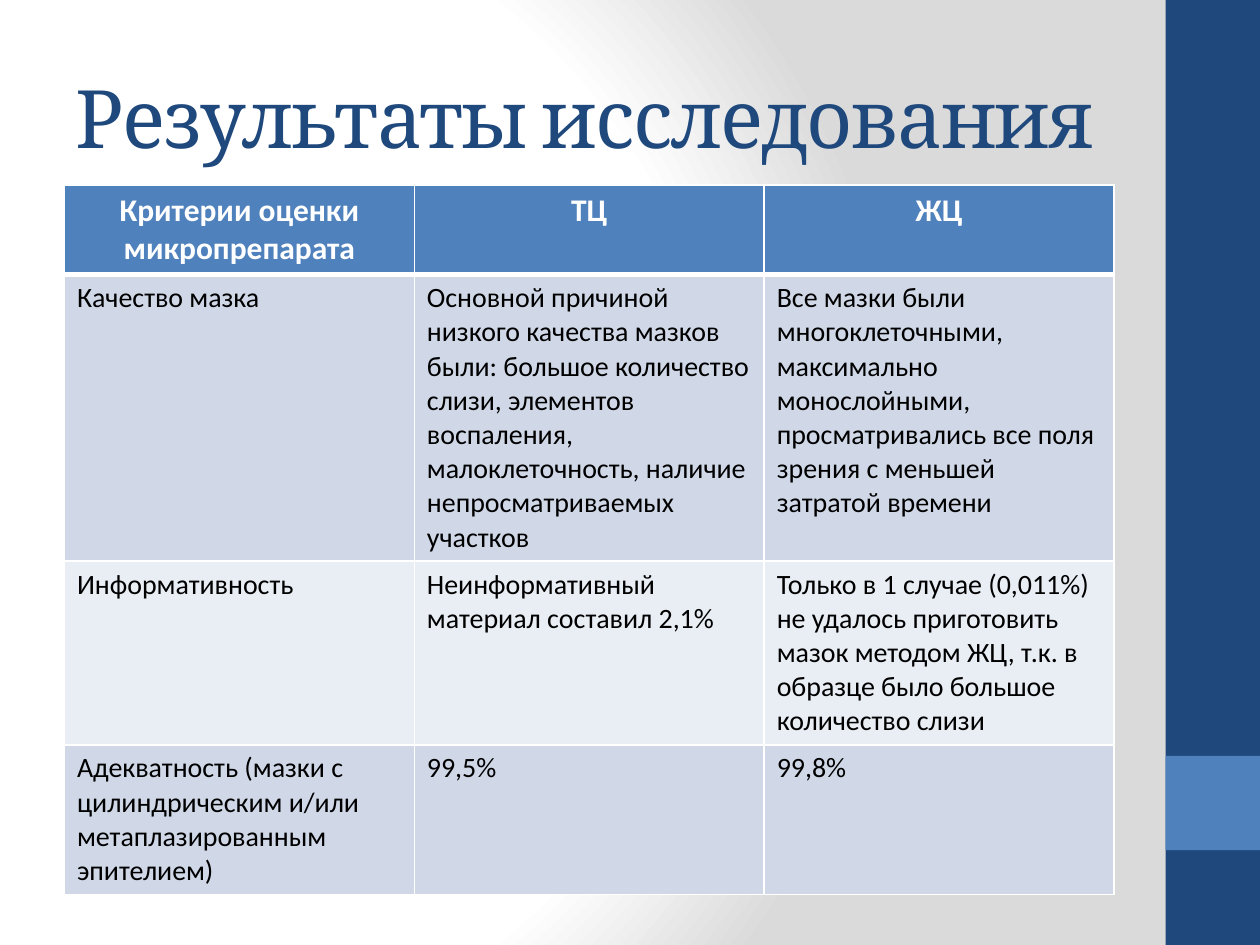
"""Build the slide comparing the TЦ and ЖЦ research results."""
from dataclasses import dataclass

from pptx import Presentation
from pptx.dml.color import RGBColor
from pptx.enum.shapes import MSO_SHAPE
from pptx.enum.text import MSO_ANCHOR, PP_ALIGN
from pptx.oxml import parse_xml
from pptx.oxml.ns import nsdecls, qn
from pptx.slide import Slide
from pptx.table import _Cell
from pptx.util import Cm, Pt


@dataclass(frozen=True)
class Theme:
    navy: str = "1F497D"
    blue: str = "4F81BD"
    white: str = "FFFFFF"
    black: str = "000000"
    grey: str = "DADADA"
    bands: tuple[str, str] = ("D0D8E8", "E9EDF4")
    heading_font: str = "Cambria"
    body_font: str = "Calibri"
    title_size: int = 46
    header_size: int = 18
    body_size: int = 16


@dataclass(frozen=True)
class SideBar:
    top: float
    height: float
    color: str


@dataclass(frozen=True)
class Criterion:
    name: str
    traditional: str
    liquid: str
    height: float


THEME = Theme()
SIDE_BARS = (SideBar(0, 19.05, THEME.navy), SideBar(15.24, 1.9, THEME.blue))
CRITERIA = (
    Criterion("Критерии оценки микропрепарата", "ТЦ", "ЖЦ", 1.78),
    Criterion(
        "Качество мазка",
        "Основной причиной низкого качества мазков были: большое количество слизи, "
        "элементов воспаления, малоклеточность, наличие непросматриваемых участков",
        "Все мазки были многоклеточными, максимально монослойными, просматривались "
        "все поля зрения с меньшей затратой времени",
        5.72,
    ),
    Criterion(
        "Информативность",
        "Неинформативный материал составил 2,1%",
        "Только в 1 случае (0,011%) не удалось приготовить мазок методом ЖЦ, т.к. "
        "в образце было большое количество слизи",
        3.68,
    ),
    Criterion(
        "Адекватность (мазки с цилиндрическим и/или метаплазированным эпителием)",
        "99,5%",
        "99,8%",
        2.87,
    ),
)


def apply(target: object, values: dict) -> None:
    """Set every attribute named in the format values."""
    for attribute, value in values.items():
        setattr(target, attribute, value)


def paint_background(slide: Slide) -> None:
    """Fill the background with a radial gradient."""
    slide.background.fill.solid()
    stops = "".join(
        f'<a:gs pos="{percent * 1000}"><a:srgbClr val="{color}"/></a:gs>'
        for percent, color in ((0, THEME.white), (75, THEME.white), (100, THEME.grey))
    )
    gradient = parse_xml(
        f'<a:gradFill {nsdecls("a")} rotWithShape="1"><a:gsLst>{stops}</a:gsLst>'
        '<a:path path="circle"><a:fillToRect l="20000" t="50000" r="100000" b="50000"/>'
        "</a:path></a:gradFill>"
    )
    plain = slide.element.find(".//" + qn("p:bgPr")).find(qn("a:solidFill"))
    plain.getparent().replace(plain, gradient)


def draw_side_bar(slide: Slide, bar: SideBar) -> None:
    """Draw one block of the right-hand strip."""
    block = slide.shapes.add_shape(
        MSO_SHAPE.RECTANGLE, Cm(23.5), Cm(bar.top), Cm(1.9), Cm(bar.height)
    )
    block.shadow.inherit = False
    block.fill.solid()
    block.fill.fore_color.rgb = RGBColor.from_string(bar.color)
    block.line.fill.background()


def write_title(slide: Slide, wording: str) -> None:
    """Place and format the slide title."""
    title = slide.shapes.title
    apply(title, {"left": Cm(1.27), "top": Cm(0.76), "width": Cm(21.16), "height": Cm(3.18)})
    frame = title.text_frame
    apply(frame, {"text": wording, "word_wrap": True, "vertical_anchor": MSO_ANCHOR.MIDDLE})
    heading = frame.paragraphs[0]
    heading.alignment = PP_ALIGN.LEFT
    font = heading.runs[0].font
    apply(font, {"name": THEME.heading_font, "size": Pt(THEME.title_size)})
    font.color.rgb = RGBColor.from_string(THEME.navy)
    heading.runs[0]._r.get_or_add_rPr().set("spc", "-100")


def add_borders(cell: _Cell, top: int, bottom: int) -> None:
    """Outline a cell in white with the given top and bottom widths."""
    properties = cell._tc.get_or_add_tcPr()
    for side, points in {"L": 1, "R": 1, "T": top, "B": bottom}.items():
        properties.append(parse_xml(
            f'<a:ln{side} {nsdecls("a")} w="{Pt(points)}"><a:solidFill>'
            f'<a:srgbClr val="{THEME.white}"/></a:solidFill></a:ln{side}>'
        ))


def fill_cell(cell: _Cell, wording: str, row: int) -> None:
    """Write and format a cell according to its row."""
    header = row == 0
    add_borders(cell, top=3 if row == 1 else 1, bottom=3 if header else 1)
    cell.fill.solid()
    background = THEME.blue if header else THEME.bands[(row - 1) % 2]
    cell.fill.fore_color.rgb = RGBColor.from_string(background)
    cell.text = wording
    paragraph = cell.text_frame.paragraphs[0]
    paragraph.alignment = PP_ALIGN.CENTER if header else PP_ALIGN.LEFT
    font = paragraph.runs[0].font
    size = THEME.header_size if header else THEME.body_size
    apply(font, {"name": THEME.body_font, "size": Pt(size), "bold": header})
    font.color.rgb = RGBColor.from_string(THEME.white if header else THEME.black)


def draw_results(slide: Slide, criteria: tuple[Criterion, ...]) -> None:
    """Draw the comparison table."""
    height = sum(criterion.height for criterion in criteria)
    results = slide.shapes.add_table(
        len(criteria), 3, Cm(1.3), Cm(3.73), Cm(21.16), Cm(height)
    ).table
    for row, criterion in enumerate(criteria):
        results.rows[row].height = Cm(criterion.height)
        wordings = (criterion.name, criterion.traditional, criterion.liquid)
        for column, wording in enumerate(wordings):
            fill_cell(results.cell(row, column), wording, row)


def main() -> None:
    """Assemble and save the presentation."""
    presentation = Presentation()
    apply(presentation, {"slide_width": Cm(25.4), "slide_height": Cm(19.05)})
    slide = presentation.slides.add_slide(presentation.slide_layouts[5])
    paint_background(slide)
    for bar in SIDE_BARS:
        draw_side_bar(slide, bar)
    write_title(slide, "Результаты исследования")
    draw_results(slide, CRITERIA)
    presentation.save("out.pptx")


if __name__ == "__main__":
    main()
